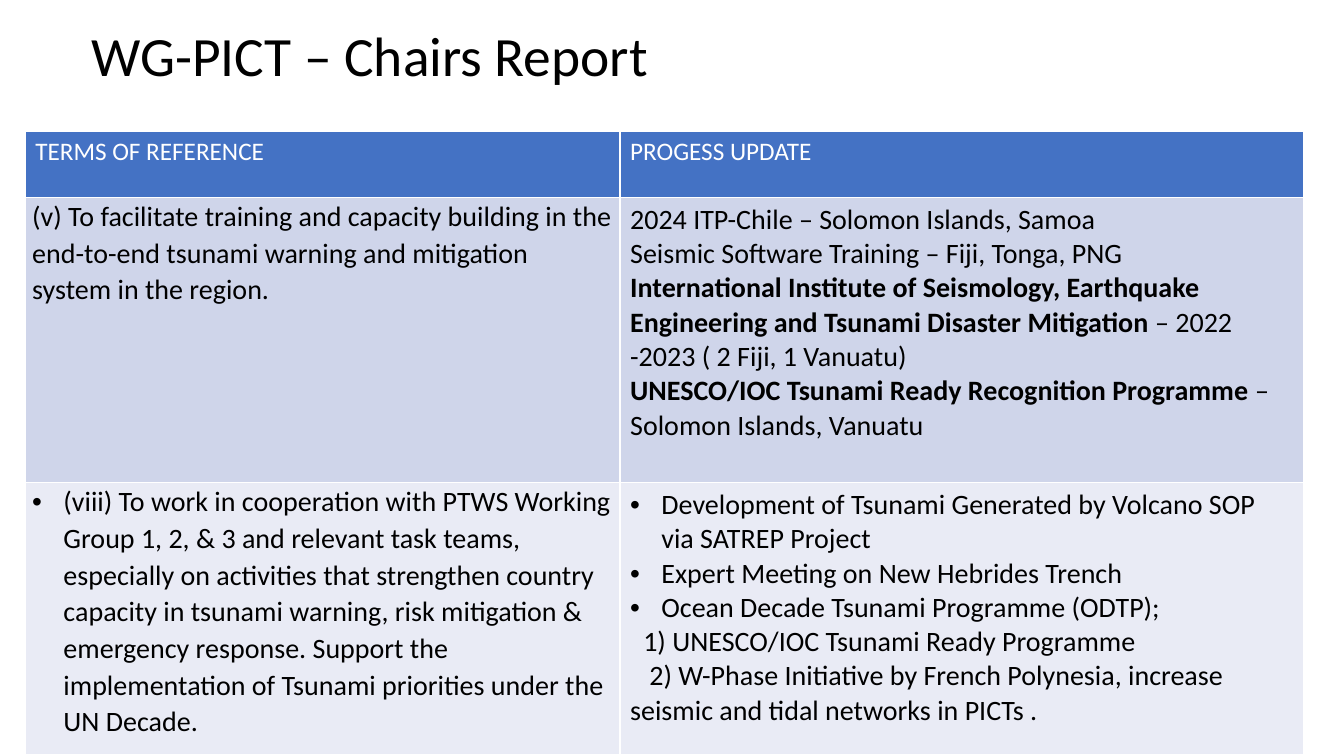
from lxml import etree
from pptx import Presentation
from pptx.dml.color import RGBColor
from pptx.enum import text as tx
from pptx.oxml import ns
from pptx.util import Inches, Pt

WHITE = RGBColor(0xFF, 0xFF, 0xFF)
BLACK = RGBColor(0, 0, 0)
BLUE = RGBColor(0x44, 0x72, 0xC4)
PALE = RGBColor(0xCF, 0xD5, 0xEA)
LIGHT = RGBColor(0xE9, 0xEB, 0xF5)
FONT = "Calibri"

TITLE = "WG-PICT – Chairs Report"
HEADS = ["TERMS OF REFERENCE", "PROGESS UPDATE"]
BULLET = (0.31, -0.31)
FLUSH = (0, 0)

TERMS = [
    (FLUSH, "", "(v) To facilitate training and capacity building in the "
     "end-to-end tsunami warning and mitigation system in the region."),
    (BULLET, "", "(viii) To work in cooperation with PTWS Working Group 1, 2, & 3 "
     "and relevant task teams, especially on activities that strengthen country "
     "capacity in tsunami warning, risk mitigation & emergency response. Support "
     "the implementation of Tsunami priorities under the UN Decade."),
]
UPDATES = [
    [
        (FLUSH, "", "2024 ITP-Chile – Solomon Islands, Samoa"),
        (FLUSH, "", "Seismic Software Training – Fiji, Tonga, PNG"),
        (FLUSH, "International Institute of Seismology, Earthquake Engineering "
         "and Tsunami Disaster Mitigation ", "– 2022 -2023 ( 2 Fiji, 1 Vanuatu)"),
        (FLUSH, "UNESCO/IOC Tsunami Ready Recognition Programme ",
         "– Solomon Islands, Vanuatu"),
    ],
    [
        (BULLET, "", "Development of Tsunami Generated by Volcano SOP via SATREP Project"),
        (BULLET, "", "Expert Meeting on New Hebrides Trench"),
        (BULLET, "", "Ocean Decade Tsunami Programme (ODTP);"),
        ((0, 0.13), "", "1) UNESCO/IOC Tsunami Ready Programme"),
        ((0, 0.19), "", "2) W-Phase Initiative by French Polynesia, increase "
         "seismic and tidal networks in PICTs ."),
    ],
]
COLS = [5.9, 6.78]
ROWS = [0.66, 2.83, 2.7]
FILLS = [BLUE, PALE, LIGHT]


def indent(para, left, first):
    props = para._p.get_or_add_pPr()
    props.set("marL", str(Inches(left)))
    props.set("indent", str(Inches(first)))
    if first < 0:
        etree.SubElement(props, ns.qn("a:buFont")).set("typeface", "Arial")
        etree.SubElement(props, ns.qn("a:buChar")).set("char", "•")


def style(font, size, color):
    font.name, font.size = FONT, Pt(size)
    font.color.rgb = color


def border(cell):
    props = cell._tc.get_or_add_tcPr()
    for side in "LRTB":
        line = etree.SubElement(props, ns.qn("a:ln" + side), w=str(Pt(1)))
        fill = etree.SubElement(line, ns.qn("a:solidFill"))
        etree.SubElement(fill, ns.qn("a:srgbClr"), val=str(WHITE))


def write(cell, items, size, color, term=False):
    frame = cell.text_frame
    if term:
        cell.margin_left = cell.margin_right = Inches(0.07)
        cell.margin_top = cell.margin_bottom = 0
    for i, (shift, strong, plain) in enumerate(items):
        para = frame.add_paragraph() if i else frame.paragraphs[0]
        if term:
            para.line_spacing, para.space_after = 1.07, Pt(8)
        indent(para, *shift)
        style(para.font, size, color)
        for words, bold in ((strong, True), (plain, False)):
            if words:
                run = para.add_run()
                run.text, run.font.bold = words, bold


def main():
    deck = Presentation()
    deck.slide_width, deck.slide_height = Inches(13.33), Inches(7.5)
    slide = deck.slides.add_slide(deck.slide_layouts[5])

    title = slide.shapes.title
    title.left, title.top = Inches(0.81), Inches(0.22)
    title.width, title.height = Inches(11.5), Inches(0.72)
    title.text_frame.text = TITLE
    title.text_frame.vertical_anchor = tx.MSO_ANCHOR.MIDDLE
    para = title.text_frame.paragraphs[0]
    para.alignment, para.line_spacing = tx.PP_ALIGN.LEFT, 0.9
    style(para.font, 39.6, BLACK)

    table = slide.shapes.add_table(
        len(ROWS), len(COLS), Inches(0.25), Inches(1.3),
        Inches(sum(COLS)), Inches(sum(ROWS))).table
    for col, width in zip(table.columns, COLS):
        col.width = Inches(width)
    for r, (height, color) in enumerate(zip(ROWS, FILLS)):
        table.rows[r].height = Inches(height)
        for c in range(len(COLS)):
            cell = table.cell(r, c)
            border(cell)
            cell.fill.solid()
            cell.fill.fore_color.rgb = color

    for c, head in enumerate(HEADS):
        write(table.cell(0, c), [(FLUSH, "", head)], 18, WHITE)
    for r, (term, update) in enumerate(zip(TERMS, UPDATES), 1):
        write(table.cell(r, 0), [term], 20, BLACK, term=True)
        write(table.cell(r, 1), update, 20, BLACK)

    deck.save("out.pptx")


if __name__ == "__main__":
    main()
